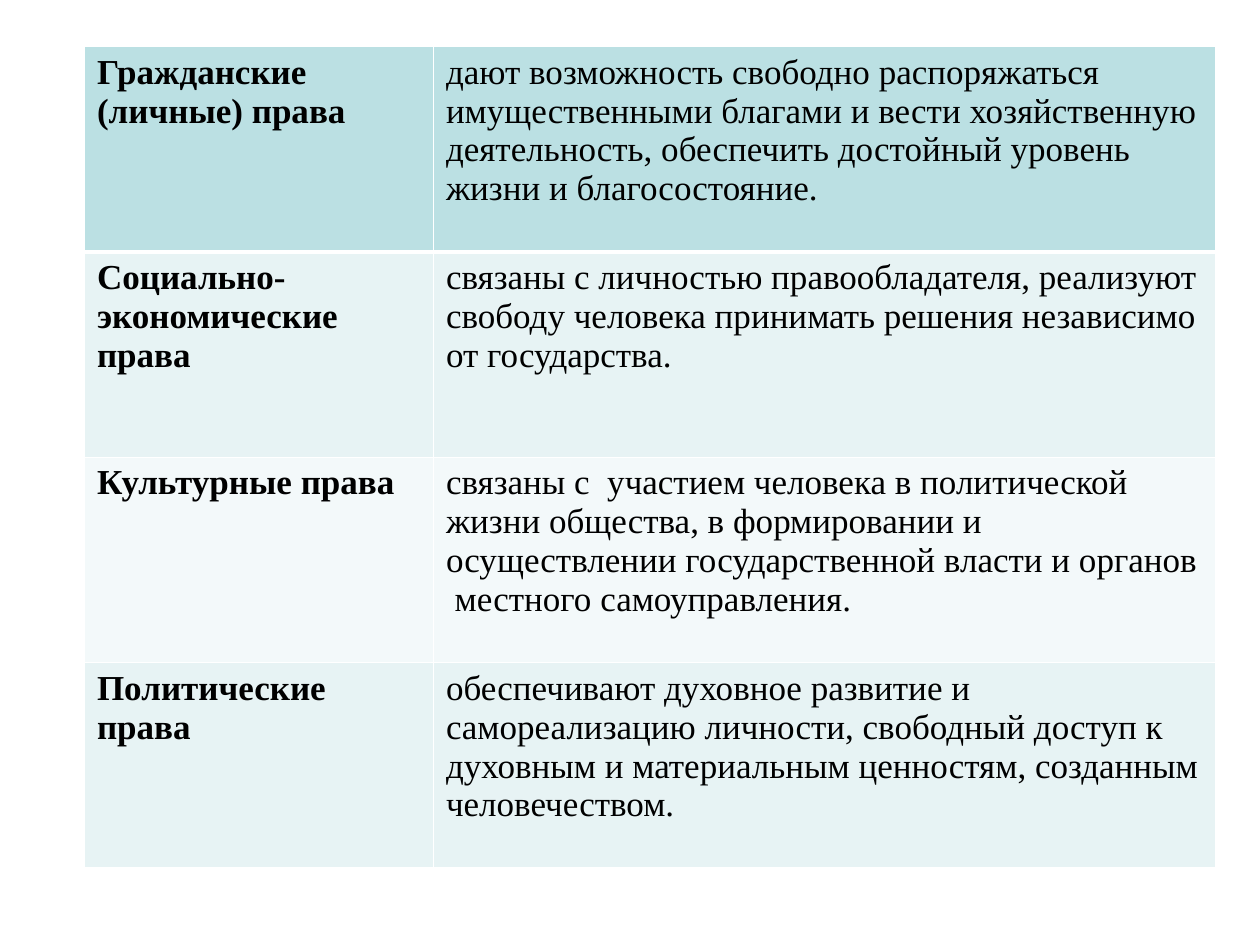
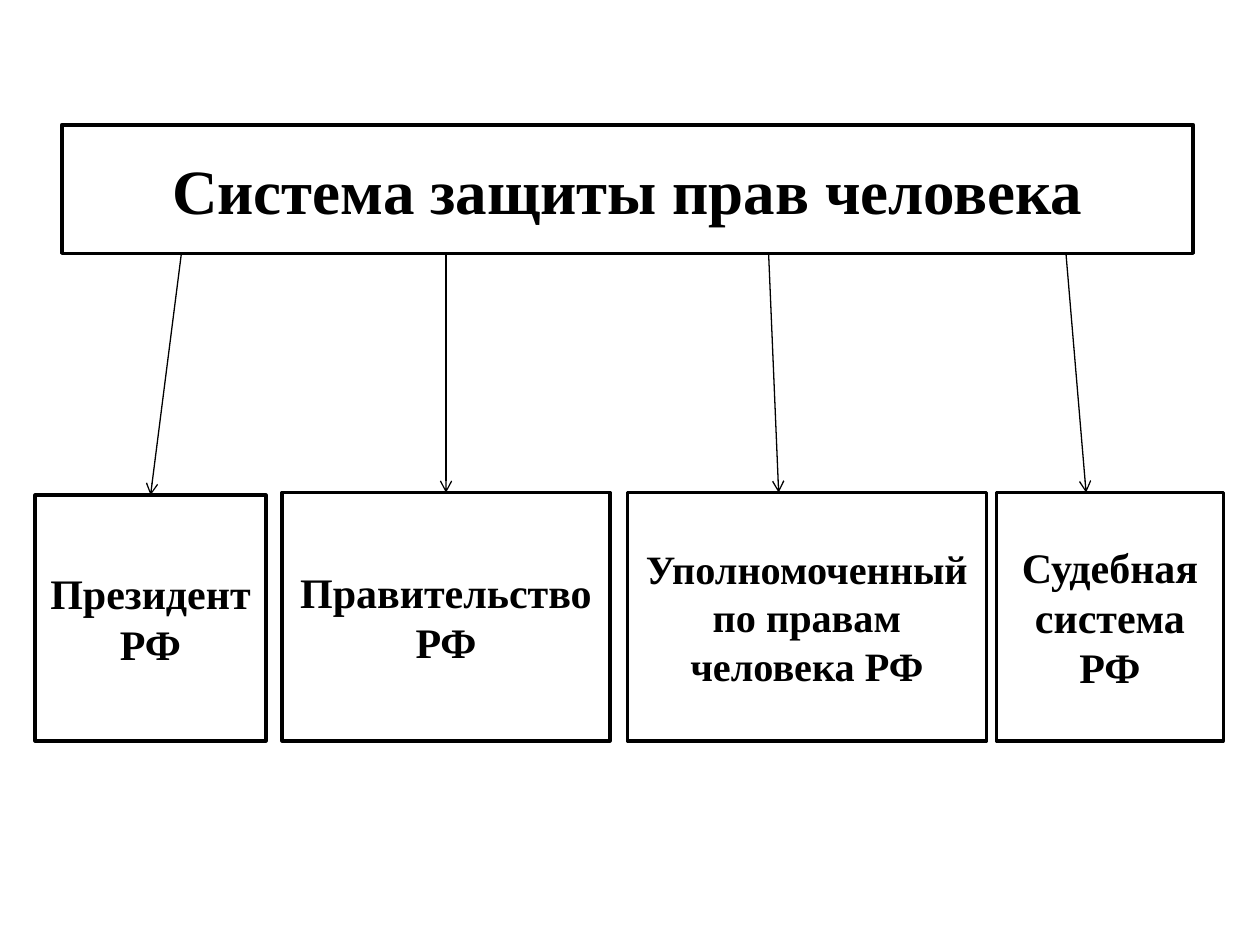
from dataclasses import dataclass

from lxml import etree
from pptx import Presentation
from pptx import util as u
from pptx.dml.color import RGBColor
from pptx.enum import shapes, text
from pptx.oxml import ns


@dataclass(frozen=True)
class Theme:
    font: str = "Times New Roman"
    ink: str = "000000"
    paper: str = "FFFFFF"
    header: str = "BBE0E3"
    bands: tuple = ("E7F3F4", "F3F9FA")
    cell_size: float = 20
    title_size: float = 36
    box_size: float = 24
    long_box_size: float = 23
    box_line: float = 2
    arrow_line: float = 0.75
    border: float = 1
    header_border: float = 3


T = Theme()

RIGHTS = [
    ("Гражданские (личные) права",
     "дают возможность свободно распоряжаться имущественными благами и вести "
     "хозяйственную деятельность, обеспечить достойный уровень жизни и благосостояние."),
    ("Социально-экономические права",
     "связаны с личностью правообладателя, реализуют свободу человека принимать "
     "решения независимо от государства."),
    ("Культурные права",
     "связаны с  участием человека в политической жизни общества, в формировании и "
     "осуществлении государственной власти и органов  местного самоуправления."),
    ("Политические права",
     "обеспечивают духовное развитие и самореализацию личности, свободный доступ к "
     "духовным и материальным ценностям, созданным человечеством."),
]

# text, left, top, width, type size, arrow start x, arrow end x (None: middle of the top)
DEFENDERS = [
    ("Президент РФ", 0.28, 3.93, 1.83, T.box_size, 1.44, None),
    ("Правительство РФ", 2.24, 3.91, 2.6, T.box_size, 3.54, None),
    ("Уполномоченный по правам человека РФ", 4.98, 3.91, 2.85, T.long_box_size, 6.1, 6.18),
    ("Судебная система РФ", 7.91, 3.91, 1.8, T.box_size, 8.46, 8.62),
]
DEFENDERS_BOTTOM = 5.88


def rgb(color):
    return RGBColor.from_string(color)


def write(tf, content, size, bold=False, align=text.PP_ALIGN.LEFT):
    tf.word_wrap = True
    p = tf.paragraphs[0]
    p.alignment = align
    r = p.add_run()
    r.text = content
    r.font.name, r.font.size, r.font.bold = T.font, u.Pt(size), bold
    r.font.color.rgb = rgb(T.ink)


def set_border(cell, side, width):
    """Draw one side (L, R, T or B) of a cell; call before filling the cell."""
    ln = etree.SubElement(cell._tc.get_or_add_tcPr(), ns.qn(f"a:ln{side}"),
                          w=str(u.Pt(width)))
    fill = etree.SubElement(ln, ns.qn("a:solidFill"))
    etree.SubElement(fill, ns.qn("a:srgbClr"), val=T.paper)


def rights_table(s, left, top, widths, row_height):
    frame = s.shapes.add_table(len(RIGHTS), len(widths), u.Inches(left), u.Inches(top),
                               u.Inches(sum(widths)), u.Inches(row_height * len(RIGHTS)))
    table = frame.table
    for col, width in zip(table.columns, widths):
        col.width = u.Inches(width)
    for i, row in enumerate(RIGHTS):
        table.rows[i].height = u.Inches(row_height)
        color = T.bands[(i - 1) % 2] if i else T.header
        for j, content in enumerate(row):
            cell = table.cell(i, j)
            for side in "LRTB":
                below_header = (i, side) in ((0, "B"), (1, "T"))
                set_border(cell, side, T.header_border if below_header else T.border)
            cell.fill.solid()
            cell.fill.fore_color.rgb = rgb(color)
            write(cell.text_frame, content, T.cell_size, bold=j == 0)


def process_box(s, content, left, top, width, height, size):
    sp = s.shapes.add_shape(shapes.MSO_SHAPE.FLOWCHART_PROCESS, u.Inches(left),
                            u.Inches(top), u.Inches(width), u.Inches(height))
    sp.shadow.inherit = False
    sp.fill.solid()
    sp.fill.fore_color.rgb = rgb(T.paper)
    sp.line.color.rgb = rgb(T.ink)
    sp.line.width = u.Pt(T.box_line)
    sp.text_frame.vertical_anchor = text.MSO_ANCHOR.MIDDLE
    write(sp.text_frame, content, size, bold=True, align=text.PP_ALIGN.CENTER)
    return sp


def arrow_down(s, source, target, start_x, end_x=None):
    """Lead from the bottom of source to the top of target, joined if end_x is None."""
    end = target.left + target.width // 2 if end_x is None else u.Inches(end_x)
    cn = s.shapes.add_connector(shapes.MSO_CONNECTOR.STRAIGHT, u.Inches(start_x),
                                source.top + source.height, end, target.top)
    if end_x is None:
        cn.end_connect(target, 0)
    cn.line.color.rgb = rgb(T.ink)
    cn.line.width = u.Pt(T.arrow_line)
    etree.SubElement(cn.line._get_or_add_ln(), ns.qn("a:tailEnd"), type="arrow")
    etree.SubElement(cn._element.spPr, ns.qn("a:effectLst"))


def protection_scheme(s, left, top, width, height):
    title = process_box(s, "Система защиты прав человека", left, top, width, height,
                        T.title_size)
    for content, x, y, w, size, start_x, end_x in DEFENDERS:
        box = process_box(s, content, x, y, w, DEFENDERS_BOTTOM - y, size)
        arrow_down(s, title, box, start_x, end_x)


def main():
    prs = Presentation()
    prs.slide_width, prs.slide_height = u.Inches(10), u.Inches(7.5)
    blank = prs.slide_layouts[6]
    rights_table(prs.slides.add_slide(blank), 0.67, 0.37, (2.77, 6.21), 1.63)
    protection_scheme(prs.slides.add_slide(blank), 0.49, 0.99, 8.98, 1.02)
    prs.save("out.pptx")


if __name__ == "__main__":
    main()
